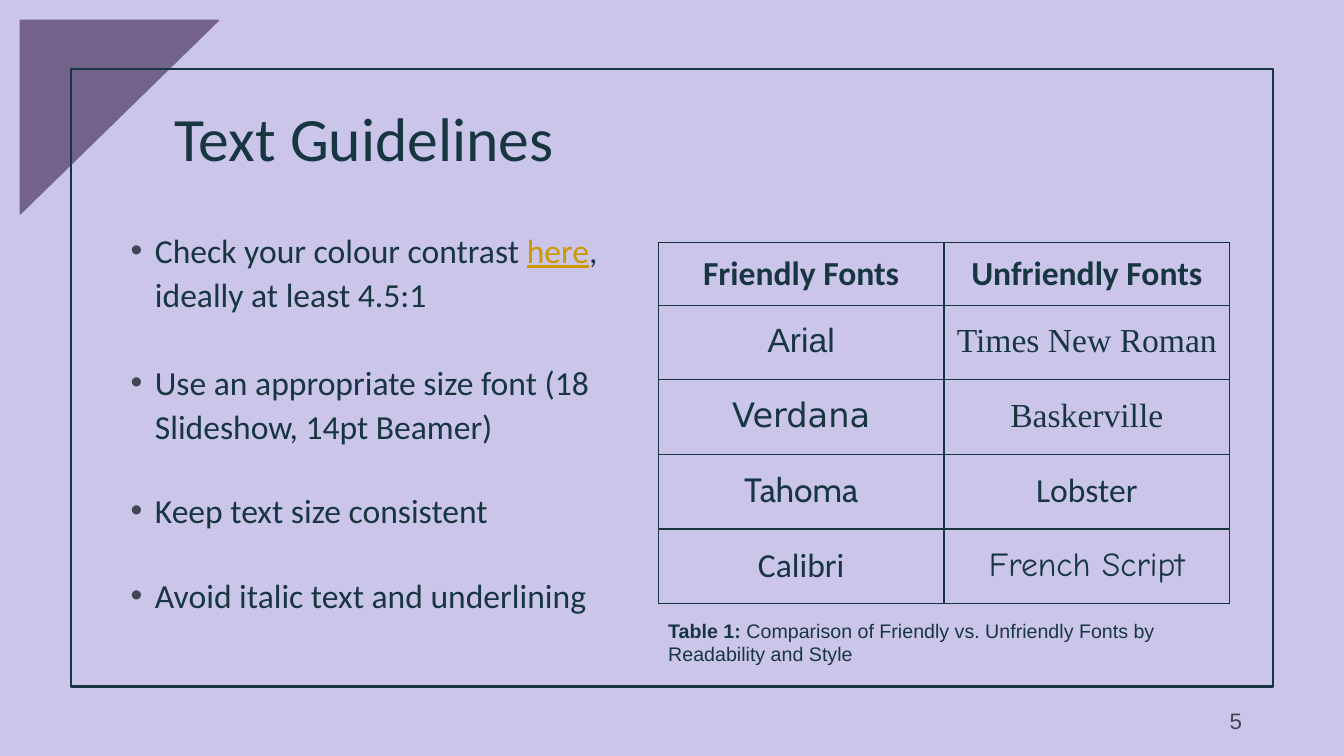
from lxml import etree
from pptx import Presentation
from pptx.dml.color import RGBColor
from pptx.enum.shapes import MSO_SHAPE
from pptx.enum.text import MSO_ANCHOR, MSO_AUTO_SIZE, PP_ALIGN
from pptx.oxml.ns import qn
from pptx.util import Cm, Pt

WEDGE = MSO_SHAPE.RIGHT_TRIANGLE
RECT = MSO_SHAPE.RECTANGLE
MIDDLE = MSO_ANCHOR.MIDDLE
TOP = MSO_ANCHOR.TOP
FIXED = MSO_AUTO_SIZE.NONE
LEFT = PP_ALIGN.LEFT
CENTER = PP_ALIGN.CENTER
RIGHT = PP_ALIGN.RIGHT

LILAC = RGBColor(0xCB, 0xC5, 0xEA)
PURPLE = RGBColor(0x73, 0x62, 0x8A)
INK = RGBColor(0x18, 0x36, 0x42)
GRAY = RGBColor(0x40, 0x46, 0x56)
GOLD = RGBColor(0xCC, 0x99, 0x00)

SANS = "Calibri"
PLAIN = "Arial"
SERIF = "Times New Roman"

POINTS = [
    (0, 1.1, [("Check your colour contrast ", False), ("here", True),
              (", ideally at least 4.5:1", False)]),
    (31, 1.1, [("Use an appropriate size font (18 Slideshow, 14pt Beamer)", False)]),
    (31, 1, [("Keep text size consistent", False)]),
    (29, 1.1, [("Avoid italic text and underlining", False)]),
]
FONTS = [
    [("Friendly Fonts", SANS), ("Unfriendly Fonts", SANS)],
    [("Arial", PLAIN), ("Times New Roman", SERIF)],
    [("Verdana", "DejaVu Sans"), ("Baskerville", SERIF)],
    [("Tahoma", "Cabin"), ("Lobster", SANS)],
    [("Calibri", SANS), ("French Script", "Comic Neue")],
]


def add_run(para, text, size, font=SANS, color=INK, bold=False, line=False):
    run = para.add_run()
    run.text = text
    run.font.size = Pt(size)
    run.font.name = font
    run.font.color.rgb = color
    run.font.bold = bold
    run.font.underline = line


def place(shape, left, top, width, height):
    shape.left, shape.top = Cm(left), Cm(top)
    shape.width, shape.height = Cm(width), Cm(height)


def add_shape(slide, kind, box, color, weight, depth):
    shape = slide.shapes.add_shape(kind, *map(Cm, box))
    shape.shadow.inherit = False
    shape.fill.background()
    shape.line.color.rgb = color
    shape.line.width = Pt(weight)
    slide.shapes._spTree.insert(depth, shape._element)
    return shape


def add_box(slide, box, anchor, align):
    frame = slide.shapes.add_textbox(*map(Cm, box)).text_frame
    frame.word_wrap = True
    frame.vertical_anchor = anchor
    para = frame.paragraphs[0]
    para.alignment = align
    return para


def set_title(title):
    place(title, 4.14, 1.73, 27.94, 3.68)
    frame = title.text_frame
    frame.auto_size = FIXED
    frame.vertical_anchor = MIDDLE
    para = frame.paragraphs[0]
    para.alignment = LEFT
    para.line_spacing = 0.9
    add_run(para, "Text Guidelines", 44)


def add_dot(para):
    props = para._p.get_or_add_pPr()
    props.set("marL", str(Cm(0.63)))
    props.set("indent", str(Cm(-0.61)))
    tint = etree.SubElement(props, qn("a:buClr"))
    etree.SubElement(tint, qn("a:srgbClr"), val=str(GRAY))
    etree.SubElement(props, qn("a:buFont"), typeface=PLAIN)
    etree.SubElement(props, qn("a:buChar"), char="•")


def set_list(body):
    place(body, 3.02, 5.56, 12.45, 11.53)
    frame = body.text_frame
    frame.auto_size = FIXED
    frame.vertical_anchor = TOP
    for i, (gap, pitch, parts) in enumerate(POINTS):
        para = frame.add_paragraph() if i else frame.paragraphs[0]
        para.line_spacing = pitch
        para.space_before = Pt(gap)
        add_dot(para)
        for text, link in parts:
            add_run(para, text, 24, color=GOLD if link else INK, line=link)


def add_rules(cell):
    props = cell._tc.get_or_add_tcPr()
    for side in ("lnL", "lnR", "lnT", "lnB"):
        rule = etree.SubElement(props, qn("a:" + side), w=str(Pt(1)))
        fill = etree.SubElement(rule, qn("a:solidFill"))
        etree.SubElement(fill, qn("a:srgbClr"), val=str(INK))


def fill_cell(cell, text, font, head):
    add_rules(cell)
    cell.fill.background()
    cell.vertical_anchor = MIDDLE
    cell.margin_left = cell.margin_right = Cm(0.25)
    cell.margin_top = cell.margin_bottom = Cm(0.25)
    para = cell.text_frame.paragraphs[0]
    para.alignment = CENTER
    para.line_spacing = 1 if head else 0.9
    add_run(para, text, 24, font, bold=head)


def add_grid(slide):
    box = map(Cm, (16.59, 6.12, 14.4, 9.09))
    table = slide.shapes.add_table(len(FONTS), 2, *box).table
    table.first_row = False
    table.horz_banding = False
    for i, row in enumerate(FONTS):
        table.rows[i].height = Cm(1.88 if i else 1.57)
        for j, (text, font) in enumerate(row):
            fill_cell(table.cell(i, j), text, font, i == 0)


def main():
    deck = Presentation()
    deck.slide_width, deck.slide_height = Cm(33.87), Cm(19.05)
    slide = deck.slides.add_slide(deck.slide_layouts[1])
    slide.background.fill.solid()
    slide.background.fill.fore_color.rgb = LILAC

    wedge = add_shape(slide, WEDGE, (0.51, 0.51, 5, 4.88), PURPLE, 1, 2)
    wedge.fill.solid()
    wedge.fill.fore_color.rgb = PURPLE
    wedge.rotation = 180
    wedge._element.spPr.xfrm.set("flipH", "1")
    add_shape(slide, RECT, (1.78, 1.73, 30.3, 15.57), INK, 1.5, 3)

    set_title(slide.shapes.title)
    set_list(slide.placeholders[1])
    add_grid(slide)
    note = add_box(slide, (16.59, 15.47, 14.4, 1.45), TOP, LEFT)
    add_run(note, "Table 1: ", 14, PLAIN, bold=True)
    add_run(note, "Comparison of Friendly vs. Unfriendly Fonts by Readability and Style",
            14, PLAIN)
    page = add_box(slide, (23.93, 17.65, 7.62, 1.02), MIDDLE, RIGHT)
    add_run(page, "5", 16, PLAIN, GRAY)
    deck.save("out.pptx")


if __name__ == "__main__":
    main()
